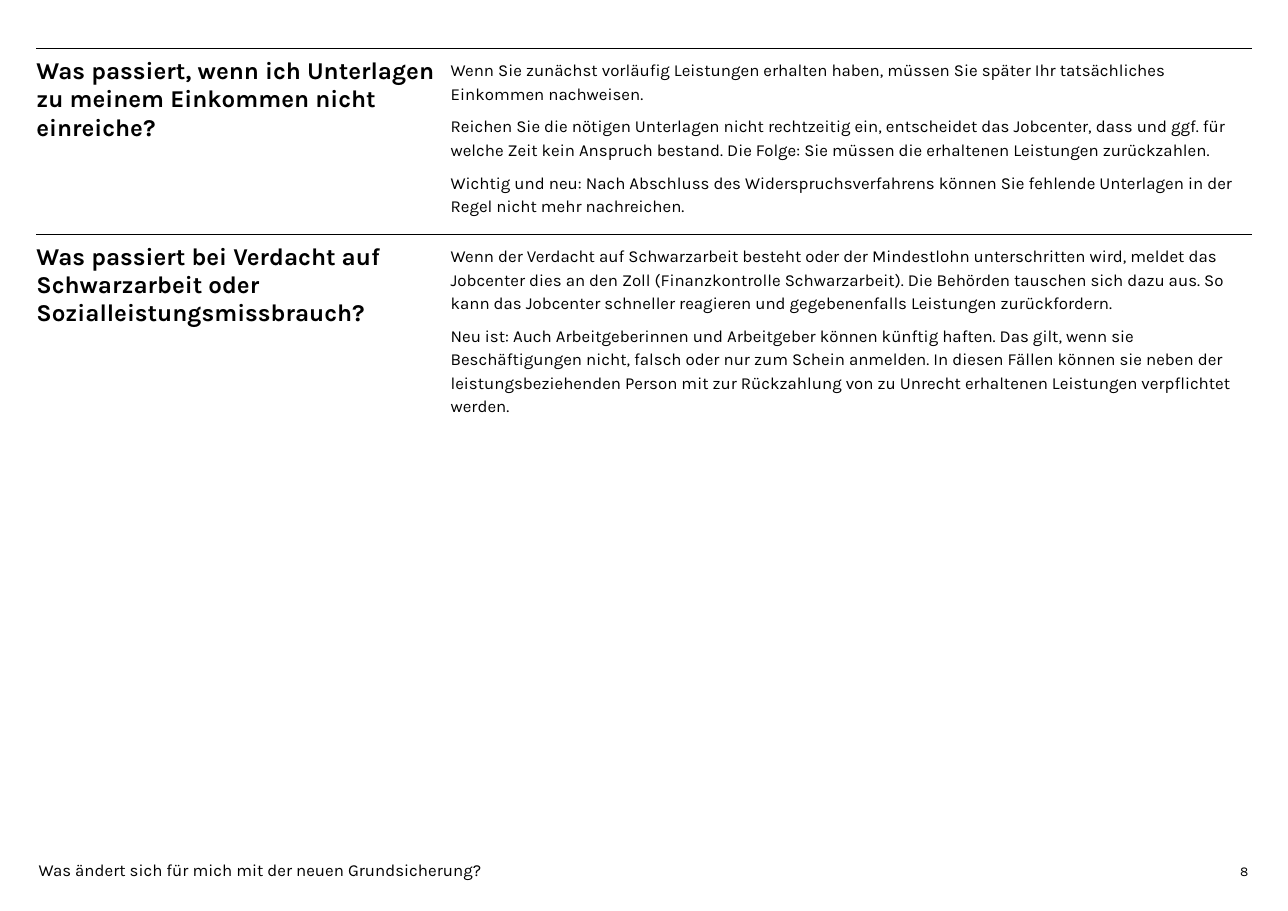
import pptx
import pptx.util
import pptx.dml.color
import pptx.enum.text
import pptx.oxml
import pptx.oxml.ns
from pptx.util import Inches, Pt

# Content: question, answer paragraphs
ROWS = [
    ("Was passiert, wenn ich Unterlagen zu meinem Einkommen nicht einreiche?", [
        "Wenn Sie zunächst vorläufig Leistungen erhalten haben, müssen Sie später Ihr "
        "tatsächliches Einkommen nachweisen.",
        "Reichen Sie die nötigen Unterlagen nicht rechtzeitig ein, entscheidet das Jobcenter, "
        "dass und ggf. für welche Zeit kein Anspruch bestand. Die Folge: Sie müssen die "
        "erhaltenen Leistungen zurückzahlen.",
        "Wichtig und neu: Nach Abschluss des Widerspruchsverfahrens können Sie fehlende "
        "Unterlagen in der Regel nicht mehr nachreichen.",
    ]),
    ("Was passiert bei Verdacht auf Schwarzarbeit oder Sozialleistungsmissbrauch?", [
        "Wenn der Verdacht auf Schwarzarbeit besteht oder der Mindestlohn unterschritten wird, "
        "meldet das Jobcenter dies an den Zoll (Finanzkontrolle Schwarzarbeit). Die Behörden "
        "tauschen sich dazu aus. So kann das Jobcenter schneller reagieren und gegebenenfalls "
        "Leistungen zurückfordern.",
        "Neu ist: Auch Arbeitgeberinnen und Arbeitgeber können künftig haften. Das gilt, wenn "
        "sie Beschäftigungen nicht, falsch oder nur zum Schein anmelden. In diesen Fällen können "
        "sie neben der leistungsbeziehenden Person mit zur Rückzahlung von zu Unrecht erhaltenen "
        "Leistungen verpflichtet werden.",
    ]),
]
FOOTER = "Was ändert sich für mich mit der neuen Grundsicherung?"
PAGE = "8"

# Design
BLACK = pptx.dml.color.RGBColor(0, 0, 0)
FONT = "Karla"
QUESTION_SIZE, BODY_SIZE, PAGE_SIZE = 15.8, 11, 8.8
W, H = 11.69, 8.27
LEFT, TOP = 0.33, 0.44
COLUMNS = (3.76, 7.27)
TABLE_HEIGHT = 3.26
LEFT_ALIGN = pptx.enum.text.PP_ALIGN.LEFT
RIGHT_ALIGN = pptx.enum.text.PP_ALIGN.RIGHT


def style(p, size, bold=False):
    p.font.name, p.font.size, p.font.bold = FONT, Pt(size), bold
    p.font.color.rgb = BLACK


def set_borders(cell, drawn):
    tcPr = cell._tc.get_or_add_tcPr()
    for side in "LRTB":
        if side in drawn:
            fill = f'<a:solidFill><a:srgbClr val="{BLACK}"/></a:solidFill>'
        else:
            fill = "<a:noFill/>"
        tcPr.append(pptx.oxml.parse_xml(
            f'<a:ln{side} {pptx.oxml.ns.nsdecls("a")} w="{Pt(1)}">{fill}</a:ln{side}>'))


def fill_cell(cell, texts, size, bold, bottom, drawn):
    cell.margin_left, cell.margin_top = 0, Inches(0.08)
    cell.margin_right, cell.margin_bottom = Inches(0.1), Inches(bottom)
    set_borders(cell, drawn)
    cell.fill.background()
    tf = cell.text_frame
    tf.text = "\n".join(texts)
    for p in tf.paragraphs:
        style(p, size, bold)
        if not bold:
            p.line_spacing, p.space_after = 1.2, Pt(6)


def add_footer(s, text, x, y, width, size, align):
    tf = s.shapes.add_textbox(Inches(x), Inches(y), Inches(width), Inches(0.23)).text_frame
    tf.margin_left = tf.margin_right = tf.margin_top = tf.margin_bottom = 0
    tf.word_wrap = True
    tf.vertical_anchor = pptx.enum.text.MSO_ANCHOR.BOTTOM
    p = tf.paragraphs[0]
    p.text, p.alignment = text, align
    style(p, size)


def main():
    prs = pptx.Presentation()
    prs.slide_width, prs.slide_height = Inches(W), Inches(H)
    s = prs.slides.add_slide(prs.slide_layouts[6])

    # Footer
    add_footer(s, FOOTER, 0.35, 7.76, 7.56, BODY_SIZE, LEFT_ALIGN)
    add_footer(s, PAGE, 9.78, 7.75, 1.55, PAGE_SIZE, RIGHT_ALIGN)

    # Questions and answers
    table = s.shapes.add_table(len(ROWS), len(COLUMNS), Inches(LEFT), Inches(TOP),
                               Inches(sum(COLUMNS)), Inches(TABLE_HEIGHT)).table
    table.first_row = table.horz_banding = False
    for column, width in zip(table.columns, COLUMNS):
        column.width = Inches(width)
    for i, (question, answers) in enumerate(ROWS):
        drawn = "T" if i == len(ROWS) - 1 else "TB"
        fill_cell(table.cell(i, 0), [question], QUESTION_SIZE, True, 0.08, drawn)
        fill_cell(table.cell(i, 1), answers, BODY_SIZE, False, 0.12, drawn)

    prs.save("out.pptx")


if __name__ == "__main__":
    main()
